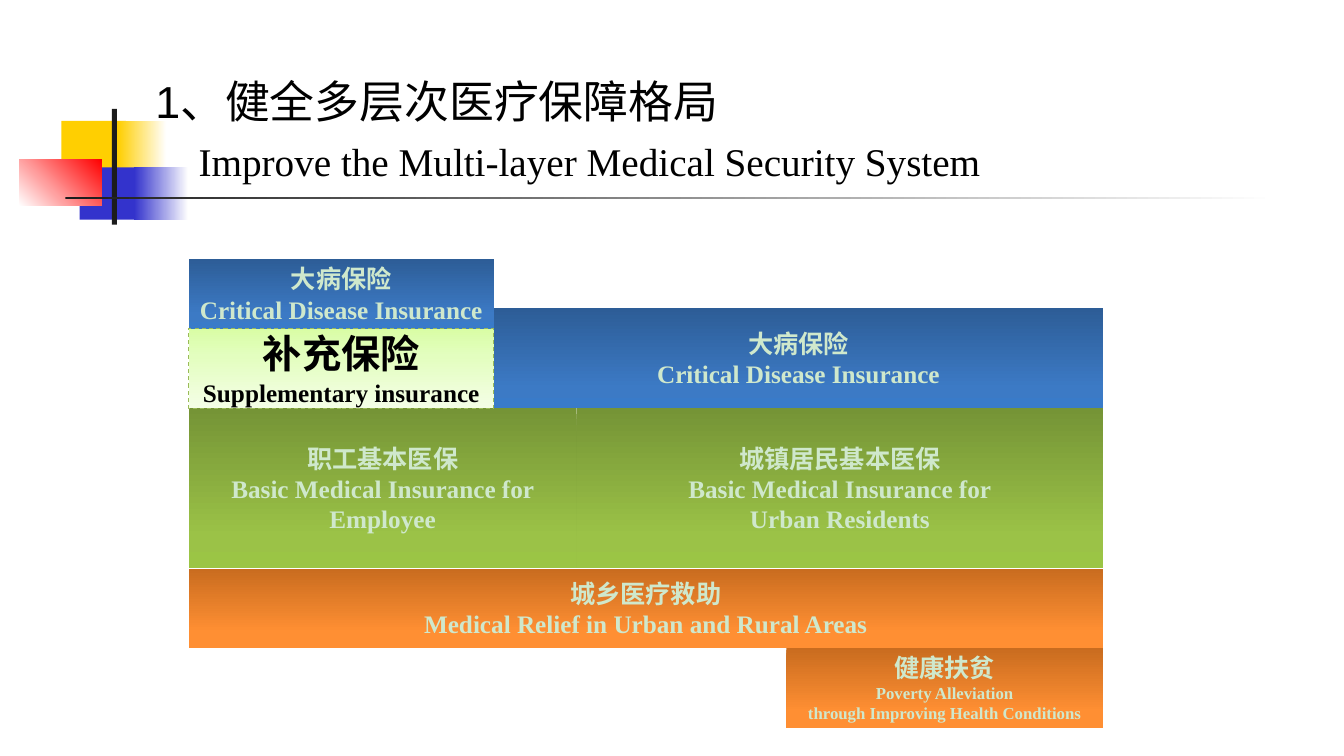
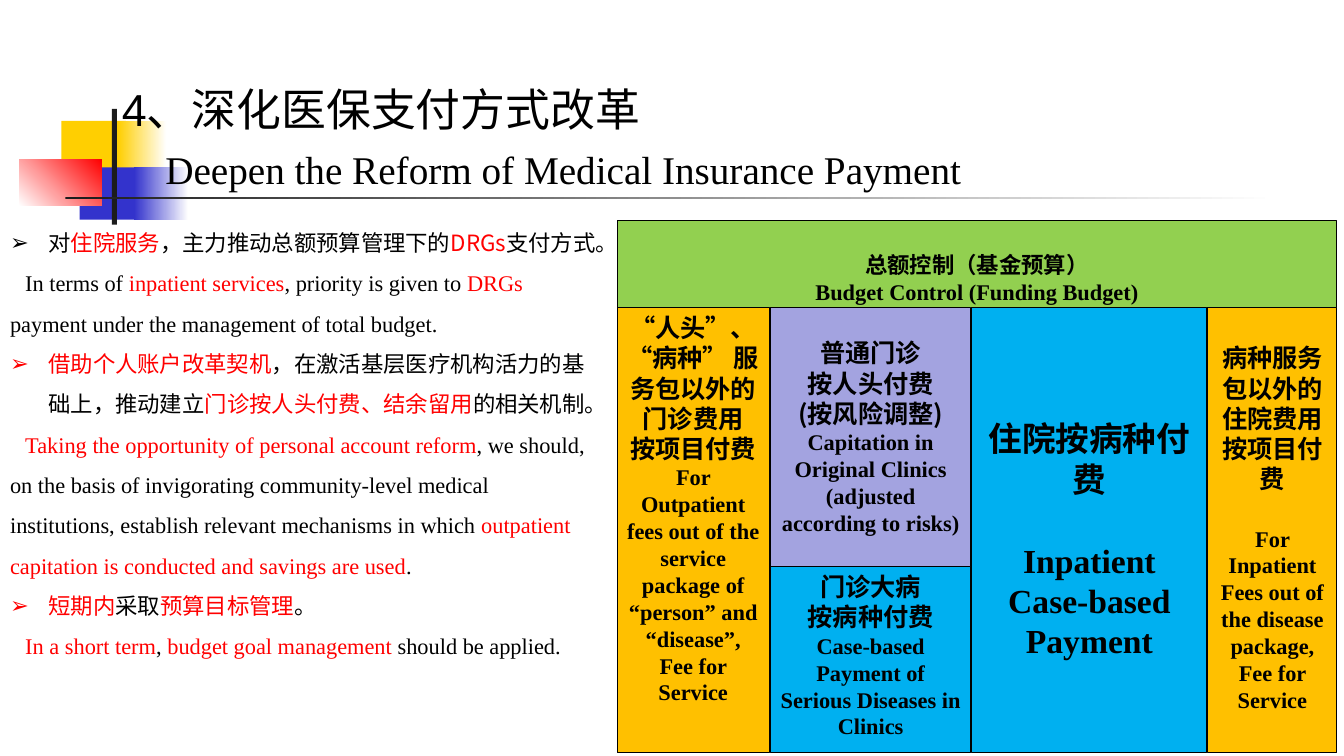
from dataclasses import dataclass

from lxml import etree
from pptx import Presentation
from pptx import util as u
from pptx.dml.color import RGBColor
from pptx.enum import dml, shapes, text
from pptx.oxml.ns import qn

WIDTH, HEIGHT = 13.33, 7.5
SERIF, SANS, CJK = "Times New Roman", "Arial", "Noto Sans CJK SC"
LEADING = 1.2

BLACK = RGBColor(0x00, 0x00, 0x00)
WHITE = RGBColor(0xFF, 0xFF, 0xFF)
RED = RGBColor(0xFF, 0x00, 0x00)
INK = RGBColor(0x1C, 0x1C, 0x1C)
YELLOW = RGBColor(0xFF, 0xCF, 0x01)
INDIGO = RGBColor(0x33, 0x33, 0xCC)
MINT = RGBColor(0xCF, 0xE8, 0xCC)
LEAF = RGBColor(0x9B, 0xBB, 0x59)
GREEN = RGBColor(0x92, 0xD0, 0x50)
LILAC = RGBColor(0xA3, 0xA3, 0xE0)
SKY = RGBColor(0x00, 0xB0, 0xF0)
AMBER = RGBColor(0xFF, 0xC0, 0x00)

ORANGE_FADE = [(0, RGBColor(0xC9, 0x6C, 0x1F)), (80, RGBColor(0xFF, 0x8F, 0x33)),
               (100, RGBColor(0xFF, 0x8F, 0x35))]
GREEN_FADE = [(0, RGBColor(0x75, 0x94, 0x36)), (80, RGBColor(0x9B, 0xC2, 0x47)),
              (100, RGBColor(0x9B, 0xC5, 0x45))]
BLUE_FADE = [(0, RGBColor(0x2D, 0x5D, 0x97)), (80, RGBColor(0x3C, 0x7A, 0xC5)),
             (100, RGBColor(0x39, 0x7B, 0xC9))]
LIME_FADE = [(0, RGBColor(0xD9, 0xFD, 0xA5)), (35, RGBColor(0xE3, 0xFE, 0xBF)),
             (100, RGBColor(0xF4, 0xFE, 0xE6))]


@dataclass
class Block:
    """A box spanning grid edges, with (text, size, font, gap before) lines."""
    columns: tuple
    rows: tuple
    fill: object
    lines: list
    color: RGBColor = BLACK
    edge: RGBColor = None
    dashed: bool = False
    top: float = None


def add_span(para, words, size, font, color, bold=False):
    """Add one formatted run to a paragraph."""
    span = para.add_run()
    span.text = words
    span.font.size = u.Pt(size)
    span.font.bold = bold
    span.font.color.rgb = color
    span.font.name = font
    etree.SubElement(span._r.get_or_add_rPr(), qn("a:ea"), typeface=CJK)


def format_para(para, align, height, before=0):
    """Set alignment and exact line height in points."""
    para.alignment = align
    para.line_spacing = u.Pt(height)
    para.space_before = u.Pt(before)
    para.space_after = u.Pt(0)


def set_indent(para, margin, first, bullet=None):
    """Set the left margin, first-line indent and bullet of a paragraph."""
    props = para._p.get_or_add_pPr()
    props.set("marL", str(u.Inches(margin)))
    props.set("indent", str(u.Inches(first)))
    if bullet:
        etree.SubElement(props, qn("a:buChar"), char=bullet)
    else:
        etree.SubElement(props, qn("a:buNone"))


def new_paras(frame, count):
    """Return the first paragraph of a frame and as many more as needed."""
    return [frame.paragraphs[0]] + [frame.add_paragraph() for _ in range(count - 1)]


def paint(shape, fill, angle=270):
    """Fill a shape with one colour or with a list of gradient stops."""
    if isinstance(fill, RGBColor):
        shape.fill.solid()
        shape.fill.fore_color.rgb = fill
        return
    shape.fill.gradient()
    shape.fill.gradient_angle = angle
    stops = shape.element.spPr.find(qn("a:gradFill")).find(qn("a:gsLst"))
    for stop in list(stops):
        stops.remove(stop)
    for share, color in fill:
        stop = etree.SubElement(stops, qn("a:gs"), pos=str(share * 1000))
        etree.SubElement(stop, qn("a:srgbClr"), val=str(color))


def add_box(page, box, fill, angle=270):
    """Add a flat rectangle without outline."""
    shape = page.shapes.add_shape(shapes.MSO_SHAPE.RECTANGLE, *map(u.Inches, box))
    shape.shadow.inherit = False
    shape.line.fill.background()
    paint(shape, fill, angle)
    return shape


def decorate_master(deck, page):
    """Put the coloured squares and the cross lines on the slide master."""
    parts = [
        ((0.61, 1.2, 0.64, 0.52), YELLOW, 0),
        ((1.17, 1.2, 0.48, 0.52), [(0, YELLOW), (100, WHITE)], 0),
        ((0.79, 1.66, 0.62, 0.52), INDIGO, 0),
        ((1.33, 1.66, 0.54, 0.52), [(0, INDIGO), (100, WHITE)], 0),
        ((0.19, 1.58, 0.82, 0.46), [(0, WHITE), (100, RED)], 45),
        ((1.11, 1.08, 0.05, 1.15), INK, 0),
        ((0.65, 1.95, 12, 0.03), [(0, INK), (100, WHITE)], 0),
    ]
    tree = deck.slide_master.shapes.element
    for number, part in enumerate(parts):
        element = add_box(page, *part).element
        element.nvSpPr.cNvPr.set("id", str(100 + number))
        tree.insert(2 + number, element)


def place(holder, box):
    """Move a placeholder and prepare its text frame."""
    holder.left, holder.top, holder.width, holder.height = map(u.Inches, box)
    frame = holder.text_frame
    frame.word_wrap = True
    frame.auto_size = text.MSO_AUTO_SIZE.NONE
    frame.vertical_anchor = text.MSO_ANCHOR.TOP
    return frame


def set_title(page, box, number, chinese, english):
    """Write the two-language title in the title placeholder."""
    first, second = new_paras(place(page.shapes.title, box), 2)
    format_para(first, text.PP_ALIGN.LEFT, 32 * LEADING)
    add_span(first, number, 32, SANS, BLACK)
    add_span(first, chinese, 32, "Roboto", BLACK)
    format_para(second, text.PP_ALIGN.LEFT, 41)
    set_indent(second, 0.43, 0)
    add_span(second, english, 28, SERIF, BLACK)


def add_blocks(page, box, columns, rows, blocks, gap=0):
    """Draw blocks on the grid edges of a box."""
    left, top = box
    for block in blocks:
        x, right = (columns[edge] for edge in block.columns)
        y, bottom = (rows[edge] for edge in block.rows)
        shape = add_box(page, (left + x, top + y, right - x - gap, bottom - y), block.fill)
        if block.edge is not None:
            shape.line.color.rgb = block.edge
            shape.line.width = u.Pt(0.75)
        if block.dashed:
            shape.line.dash_style = dml.MSO_LINE.DASH
        frame = shape.text_frame
        frame.word_wrap = True
        frame.margin_top = frame.margin_bottom = 0
        frame.vertical_anchor = text.MSO_ANCHOR.MIDDLE
        if block.top is not None:
            frame.margin_top = u.Inches(block.top)
            frame.vertical_anchor = text.MSO_ANCHOR.TOP
        for para, line in zip(new_paras(frame, len(block.lines)), block.lines):
            words, size, font, before = line
            format_para(para, text.PP_ALIGN.CENTER, size * LEADING, before)
            add_span(para, words, size, font, block.color, True)


def add_points(page, box, points):
    """Write bulleted Chinese points, each followed by its English text."""
    frame = place(page.placeholders[1], box)
    for index, (para, spans) in enumerate(zip(new_paras(frame, len(points)), points)):
        chinese = index % 2 == 0
        format_para(para, text.PP_ALIGN.LEFT, 16 * LEADING * 1.5)
        set_indent(para, *((0.38, -0.38, "➢") if chinese else (0, 0.15)))
        for words, color in spans:
            add_span(para, words, 16, CJK if chinese else SERIF, color)


def zh(words, size=18):
    """Describe a Chinese block line."""
    return words, size, CJK, 0


def en(words, size=18, before=0):
    """Describe an English block line."""
    return words, size, SERIF, before


def build_layers(page):
    """Build the slide on the layers of medical security."""
    set_title(page, (1.44, 0.68, 10.45, 1.18), "1、", "健全多层次医疗保障格局",
              "Improve the Multi-layer Medical Security System")
    critical = [zh("大病保险"), en("Critical Disease Insurance")]
    blocks = [
        Block((0, 4), (4, 5), ORANGE_FADE,
              [zh("城乡医疗救助"), en("Medical Relief in Urban and Rural Areas")], MINT),
        Block((0, 2), (3, 4), GREEN_FADE,
              [zh("职工基本医保"), en("Basic Medical Insurance for Employee")], MINT),
        Block((2, 4), (3, 4), GREEN_FADE,
              [zh("城镇居民基本医保"), en("Basic Medical Insurance for"),
               en("Urban Residents")], MINT),
        Block((1, 4), (1, 3), BLUE_FADE, critical, MINT),
        Block((0, 1), (0, 2), BLUE_FADE, critical, MINT),
        Block((0, 1), (2, 3), LIME_FADE,
              [zh("补充保险", 28), en("Supplementary insurance")], edge=LEAF, dashed=True),
        Block((3, 4), (5, 6), ORANGE_FADE,
              [zh("健康扶贫"), en("Poverty Alleviation", 12),
               en("through Improving Health Conditions", 12)], MINT),
    ]
    add_blocks(page, (1.87, 2.57), (0, 3.03, 3.85, 5.93, 9.07),
               (0, 0.49, 0.69, 1.48, 3.07, 3.86, 4.65), blocks)


def build_payment(page):
    """Build the slide on the reform of payment methods."""
    set_title(page, (1.11, 0.76, 10.63, 1.48), "4、", "深化医保支付方式改革",
              "Deepen the Reform of Medical Insurance Payment")
    blocks = [
        Block((0, 4), (0, 2), GREEN,
              [zh("总额控制（基金预算）", 16), en("Budget Control (Funding Budget)", 16)],
              edge=BLACK, top=0.3),
        Block((1, 2), (1, 3), LILAC,
              [zh("普通门诊"), zh("按人头付费"), zh("(按风险调整)"),
               en("Capitation in Original Clinics (adjusted according to risks)", 16)],
              edge=BLACK, top=0.3),
        Block((2, 3), (1, 4), SKY,
              [zh("住院按病种付费", 24), en("Inpatient Case-based Payment", 24, 29)],
              edge=BLACK, top=1.1),
        Block((0, 1), (1, 4), AMBER,
              [zh("“人头”、“病种” 服务包以外的"), zh("门诊费用"), zh("按项目付费"),
               en("For Outpatient fees out of the service package of “person” and "
                  "“disease”, Fee for Service", 16)],
              edge=BLACK, top=0.05),
        Block((3, 4), (1, 4), AMBER,
              [zh("病种服务包以外的住院费用按项目付费"),
               en("For Inpatient Fees out of the disease package, Fee for Service", 16, 22)],
              edge=BLACK, top=0.35),
        Block((1, 2), (3, 4), SKY,
              [zh("门诊大病"), zh("按病种付费"),
               en("Case-based Payment of Serious Diseases in Clinics", 16)],
              edge=BLACK, top=0.05),
    ]
    add_blocks(page, (6.12, 2.19), (0, 1.52, 3.52, 5.86, 7.15),
               (0, 0.86, 1.1, 3.43, 5.28), blocks, gap=0.01)
    add_points(page, (0, 2.09, 6.03, 4.95), [
        [("对", BLACK), ("住院服务", RED), ("，主力推动总额预算管理下的", BLACK),
         ("DRGs", RED), ("支付方式。", BLACK)],
        [("In terms of ", BLACK), ("inpatient services", RED),
         (", priority is given to ", BLACK), ("DRGs", RED),
         (" payment under the management of total budget.", BLACK)],
        [("借助个人账户改革契机", RED), ("，在激活基层医疗机构活力的基础上，推动建立", BLACK),
         ("门诊按人头付费、结余留用", RED), ("的相关机制。", BLACK)],
        [("Taking the opportunity of personal account reform", RED),
         (", we should, on the basis of invigorating community-level medical institutions, "
          "establish relevant mechanisms in which ", BLACK),
         ("outpatient capitation is conducted and savings are used", RED), (".", BLACK)],
        [("短期内", RED), ("采取", BLACK), ("预算目标管理", RED), ("。", BLACK)],
        [("In a short term", RED), (", ", BLACK), ("budget goal management ", RED),
         ("should be applied.", BLACK)],
    ])


def main():
    """Build and save the deck."""
    deck = Presentation()
    deck.slide_width, deck.slide_height = u.Inches(WIDTH), u.Inches(HEIGHT)
    layers = deck.slides.add_slide(deck.slide_layouts[5])
    decorate_master(deck, layers)
    build_layers(layers)
    build_payment(deck.slides.add_slide(deck.slide_layouts[1]))
    deck.save("out.pptx")


if __name__ == "__main__":
    main()
